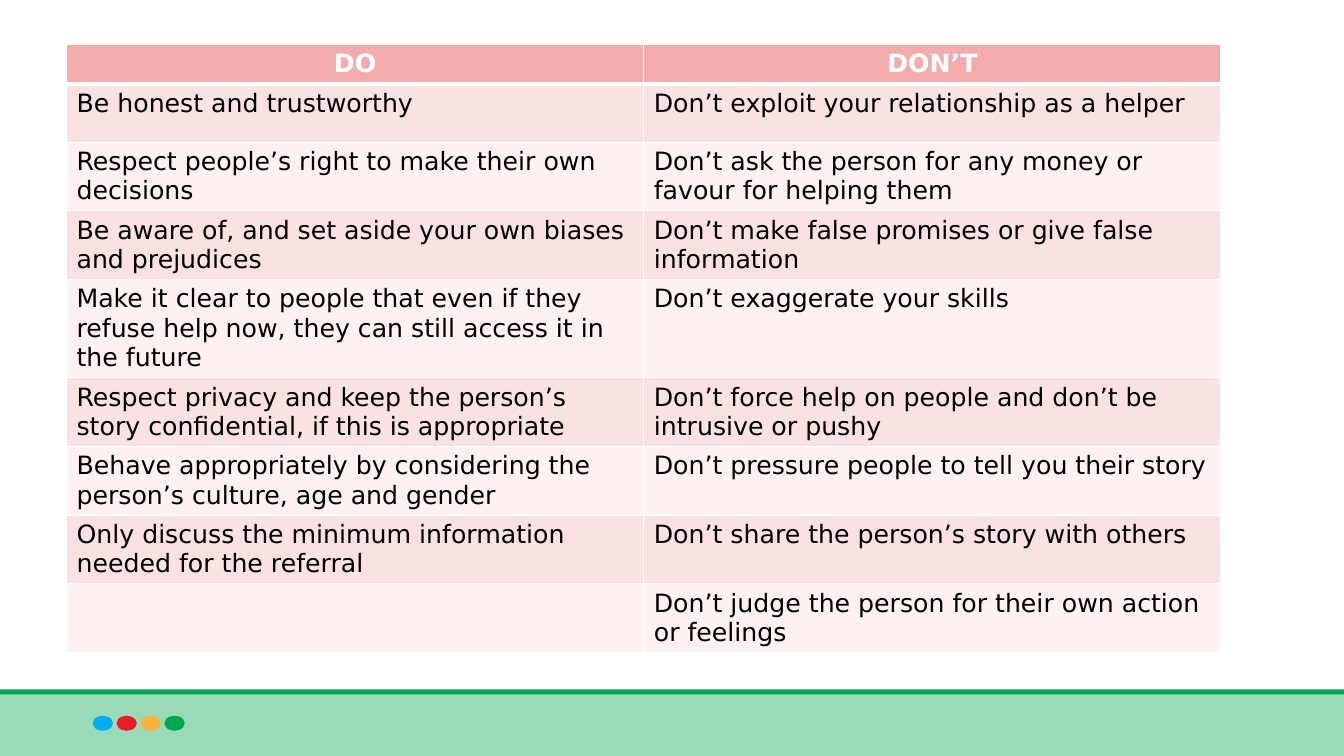
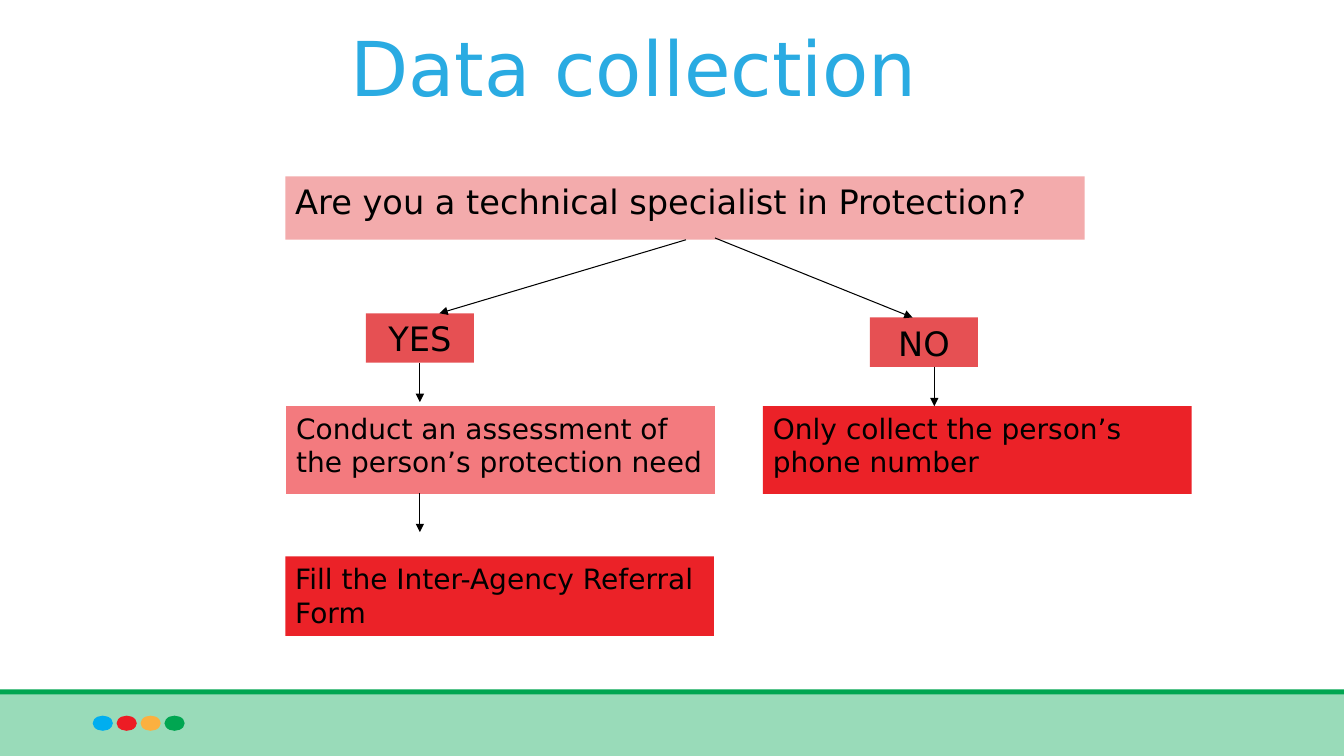
from dataclasses import dataclass

from lxml.etree import SubElement
from pptx import Presentation
from pptx.dml.color import RGBColor
from pptx.enum.shapes import MSO_CONNECTOR, MSO_SHAPE
from pptx.enum.text import MSO_ANCHOR, PP_ALIGN
from pptx.oxml import parse_xml
from pptx.oxml.ns import nsdecls, qn
from pptx.util import Inches, Pt

FONT = "DejaVu Sans"
COLORS = {
    "white": "FFFFFF",
    "black": "000000",
    "title": "2AABE2",
    "band": "99DBB9",
    "blue": "00AEEF",
    "red": "ED1C24",
    "orange": "FBB040",
    "green": "00A651",
    "pink": "F3ABAC",
    "row_dark": "FAE2E3",
    "row_light": "FDF1F1",
    "answer": "E65053",
    "assessment": "F37A7E",
    "outcome": "EB2228",
}
ADVICE = [
    ("DO", "DON’T"),
    ("Be honest and trustworthy", "Don’t exploit your relationship as a helper"),
    ("Respect people’s right to make their own decisions",
     "Don’t ask the person for any money or favour for helping them"),
    ("Be aware of, and set aside your own biases and prejudices",
     "Don’t make false promises or give false information"),
    ("Make it clear to people that even if they refuse help now, they can still access it in the future",
     "Don’t exaggerate your skills"),
    ("Respect privacy and keep the person’s story confidential, if this is appropriate",
     "Don’t force help on people and don’t be intrusive or pushy"),
    ("Behave appropriately by considering the person’s culture, age and gender",
     "Don’t pressure people to tell you their story"),
    ("Only discuss the minimum information needed for the referral",
     "Don’t share the person’s story with others"),
    ("", "Don’t judge the person for their own action or feelings"),
]
ROW_SHARES = [6.4, 9.6, 11.3, 11.3, 16.2, 11.3, 11.3, 11.3, 11.3]


@dataclass
class Box:
    left: int
    top: int
    width: int
    height: int

    def point(self, across, down):
        return (int(self.left + self.width * across / 100),
                int(self.top + self.height * down / 100))

    def region(self, left, top, width, height):
        return Box(*self.point(left, top),
                   int(self.width * width / 100), int(self.height * height / 100))

    def frame(self):
        return self.left, self.top, self.width, self.height


SLIDE = Box(0, 0, Inches(13.33), Inches(7.5))


def color(name):
    return RGBColor.from_string(COLORS[name])


def write(text_frame, text, size, color_name="black", align=PP_ALIGN.LEFT, bold=False):
    paragraph = text_frame.paragraphs[0]
    paragraph.alignment = align
    run = paragraph.add_run()
    run.text = text
    run.font.name = FONT
    run.font.size = Pt(size)
    run.font.bold = bold
    run.font.color.rgb = color(color_name)


def add_block(slide, box, fill, preset=MSO_SHAPE.RECTANGLE):
    shape = slide.shapes.add_shape(preset, *box.frame())
    shape.shadow.inherit = False
    shape.fill.solid()
    shape.fill.fore_color.rgb = color(fill)
    shape.line.fill.background()
    return shape


def add_step(slide, box, text, fill, size, align=PP_ALIGN.LEFT):
    shape = add_block(slide, box, fill)
    shape.text_frame.word_wrap = True
    shape.text_frame.vertical_anchor = MSO_ANCHOR.TOP
    write(shape.text_frame, text, size, align=align)
    return shape


def add_arrow(slide, start, end):
    arrow = slide.shapes.add_connector(MSO_CONNECTOR.STRAIGHT, *start, *end)
    arrow.line.color.rgb = color("black")
    arrow.line.width = Pt(0.75)
    properties = arrow._element.spPr
    SubElement(properties.find(qn("a:ln")), qn("a:tailEnd"), type="triangle")
    SubElement(properties, qn("a:effectLst"))
    return arrow


def add_footer(slide, box):
    add_block(slide, box.region(0, 4.5, 100, 95.5), "band")
    for index, name in enumerate(["blue", "red", "orange", "green"]):
        add_block(slide, box.region(6.9 + 1.78 * index, 39.4, 1.5, 22.7), name, MSO_SHAPE.OVAL)
    add_block(slide, box.region(0, 0, 100, 7.6), "green")


def add_title(slide, box, text):
    text_frame = slide.shapes.add_textbox(*box.frame()).text_frame
    text_frame.word_wrap = True
    text_frame.vertical_anchor = MSO_ANCHOR.BOTTOM
    text_frame.margin_top = text_frame.margin_bottom = 0
    write(text_frame, text, 54, "title", PP_ALIGN.CENTER)


def add_borders(cell, widths):
    properties = cell._tc.get_or_add_tcPr()
    for index, (side, width) in enumerate(widths.items()):
        properties.insert(index, parse_xml(
            f'<a:ln{side} {nsdecls("a")} w="{Pt(width)}"><a:solidFill>'
            f'<a:srgbClr val="{COLORS["white"]}"/></a:solidFill></a:ln{side}>'))


def add_advice_table(slide, box):
    table = slide.shapes.add_table(len(ADVICE), 2, *box.frame()).table
    for row_index, (texts, share) in enumerate(zip(ADVICE, ROW_SHARES)):
        header = row_index == 0
        fill = "pink" if header else "row_dark" if row_index % 2 else "row_light"
        table.rows[row_index].height = int(box.height * share / 100)
        widths = {"L": 1, "R": 1, "T": 3 if row_index == 1 else 1, "B": 3 if header else 1}
        for column_index, text in enumerate(texts):
            cell = table.cell(row_index, column_index)
            cell.fill.solid()
            cell.fill.fore_color.rgb = color(fill)
            add_borders(cell, widths)
            if header:
                write(cell.text_frame, text, 18, "white", PP_ALIGN.CENTER, True)
            elif text:
                write(cell.text_frame, text, 18)


def add_decision_tree(slide, box):
    add_step(slide, box.region(0, 0, 88.2, 13.8),
             "Are you a technical specialist in Protection?", "pink", 24)
    yes = add_step(slide, box.region(8.9, 29.8, 11.9, 10.75), "YES", "answer", 24, PP_ALIGN.CENTER)
    add_step(slide, box.region(64.5, 30.7, 11.9, 10.75), "NO", "answer", 24, PP_ALIGN.CENTER)
    add_step(slide, box.region(0.1, 50, 47.3, 19.1),
             "Conduct an assessment of the person’s protection need", "assessment", 20)
    add_step(slide, box.region(0, 82.7, 47.3, 17.3),
             "Fill the Inter-Agency Referral Form", "outcome", 20)
    add_step(slide, box.region(52.7, 50, 47.3, 19.1),
             "Only collect the person’s phone number", "outcome", 20)
    for start, end in [
        ((44.2, 13.8), (17, 29.8)),
        ((47.4, 13.4), (69.2, 30.7)),
        ((71.6, 41.4), (71.6, 50)),
        ((14.85, 68.9), (14.85, 77.4)),
    ]:
        add_arrow(slide, box.point(*start), box.point(*end))
    yes_arrow = add_arrow(slide, box.point(14.85, 40.55), box.point(14.85, 49.1))
    yes_arrow.begin_connect(yes, 2)


def add_slide(presentation):
    slide = presentation.slides.add_slide(presentation.slide_layouts[6])
    add_footer(slide, SLIDE.region(0, 91.2, 100, 8.8))
    return slide


def main():
    presentation = Presentation()
    presentation.slide_width = SLIDE.width
    presentation.slide_height = SLIDE.height
    add_advice_table(add_slide(presentation), SLIDE.region(4.95, 5.9, 85.9, 80.3))
    collection = add_slide(presentation)
    add_title(collection, SLIDE.region(10.05, 10.5, 74.2, 4.3), "Data collection")
    add_decision_tree(collection, SLIDE.region(21.23, 23.33, 67.44, 60.8))
    presentation.save("out.pptx")


if __name__ == "__main__":
    main()
